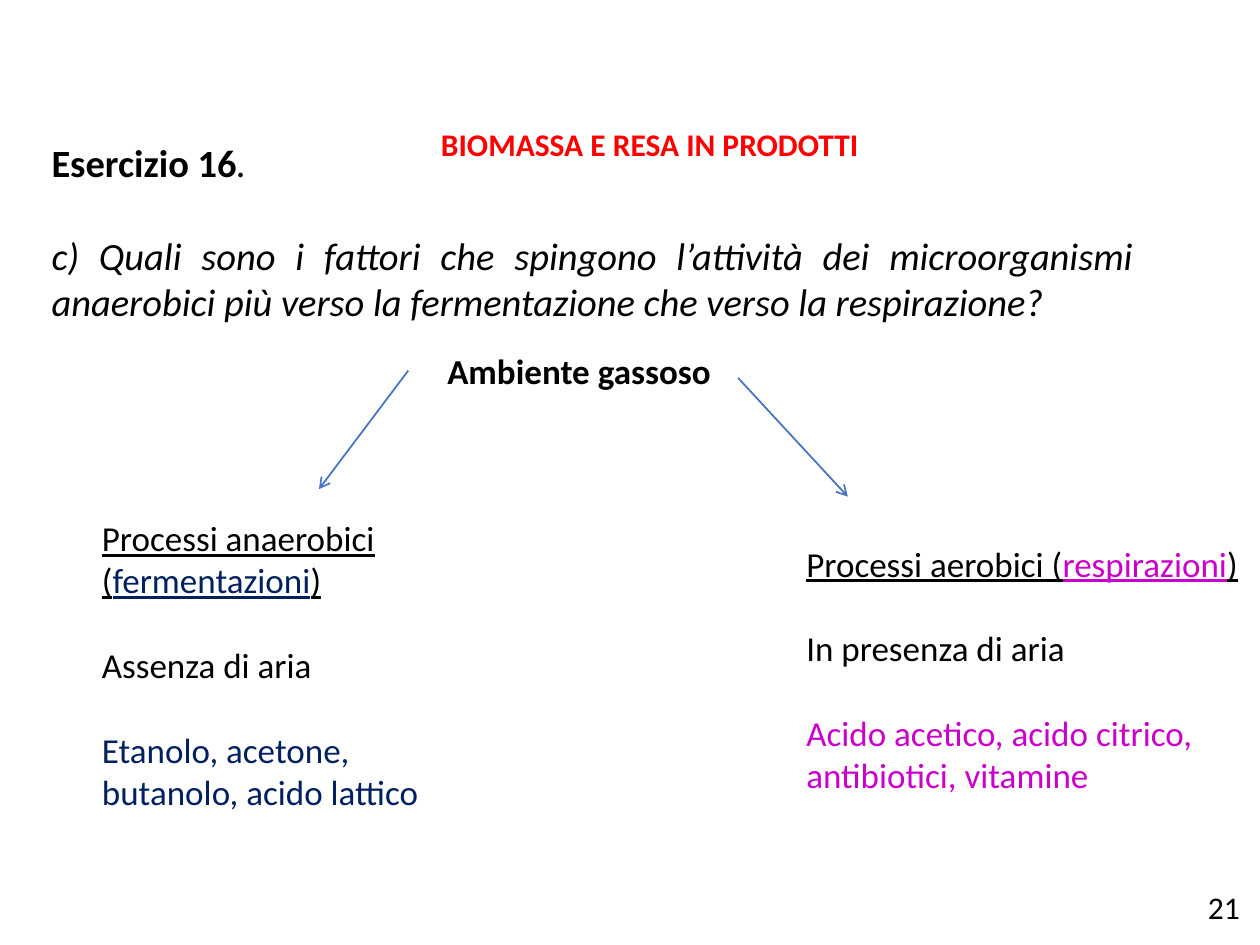
from lxml import etree
from pptx import Presentation
from pptx import util as u
from pptx.dml.color import RGBColor
from pptx.enum import shapes, text
from pptx.oxml.ns import qn

BLACK = RGBColor(0x00, 0x00, 0x00)
RED = RGBColor(0xFF, 0x00, 0x00)
NAVY = RGBColor(0x00, 0x20, 0x60)
MAGENTA = RGBColor(0xCC, 0x00, 0xCC)
BLUE = RGBColor(0x44, 0x72, 0xC4)
LEFT, CENTER, JUSTIFY = text.PP_ALIGN.LEFT, text.PP_ALIGN.CENTER, text.PP_ALIGN.JUSTIFY


def place(part, left, top, width, height, wrap=True):
    part.left, part.top = u.Cm(left), u.Cm(top)
    part.width, part.height = u.Cm(width), u.Cm(height)
    frame = part.text_frame
    frame.word_wrap = wrap
    frame.auto_size = text.MSO_AUTO_SIZE.NONE
    return frame


def write(frame, runs, size, align=LEFT, before=0):
    paragraph = frame.paragraphs[0]
    if paragraph.runs:
        paragraph = frame.add_paragraph()
    paragraph.alignment = align
    paragraph.space_before = u.Pt(before)
    properties = paragraph._p.get_or_add_pPr()
    properties.set("marL", "0")
    properties.set("indent", "0")
    etree.SubElement(properties, qn("a:buNone"))
    for words, color, style in runs:
        run = paragraph.add_run()
        run.text = words
        run.font.name = "Calibri"
        run.font.size = u.Pt(size)
        run.font.color.rgb = color
        run.font.bold = "b" in style
        run.font.italic = "i" in style
        run.font.underline = "u" in style


deck = Presentation()
deck.slide_width, deck.slide_height = u.Cm(25.4), u.Cm(19.05)
slide = deck.slides.add_slide(deck.slide_layouts[3])
heading, anaerobic, aerobic = slide.placeholders

heading_frame = place(heading, 1.8, 2.26, 22.6, 1.27)
write(heading_frame, [("BIOMASSA E RESA IN PRODOTTI", RED, "b")], 18, CENTER)

exercise = place(slide.shapes.add_textbox(0, 0, 0, 0), 0.79, 2.67, 22.3, 4.95)
write(exercise, [("Esercizio 16", BLACK, "b"), (". ", BLACK, "i")], 22, JUSTIFY)
question = ("c) Quali sono i fattori che spingono l’attività dei microorganismi "
            "anaerobici più verso la fermentazione che verso la respirazione?")
write(exercise, [(question, BLACK, "i")], 22, JUSTIFY, before=26.8)

environment = place(slide.shapes.add_textbox(0, 0, 0, 0), 8.74, 6.93, 5.87, 1.12, wrap=False)
write(environment, [("Ambiente gassoso", BLACK, "b")], 20, CENTER)

for start_x, start_y, end_x, end_y in [(8.23, 7.47, 6.43, 9.86), (14.88, 7.62, 17.09, 10.01)]:
    branch = slide.shapes.add_connector(
        shapes.MSO_CONNECTOR.STRAIGHT,
        u.Cm(start_x), u.Cm(start_y), u.Cm(end_x), u.Cm(end_y))
    branch.line.color.rgb = BLUE
    branch.line.width = u.Pt(1)
    etree.SubElement(branch.line._get_or_add_ln(), qn("a:tailEnd"), type="arrow")
    etree.SubElement(branch._element.spPr, qn("a:effectLst"))

processes = [
    (place(anaerobic, 1.8, 10.29, 8.41, 7.09), NAVY,
     "Processi anaerobici (", "fermentazioni", "Assenza di aria",
     ["Etanolo, acetone, butanolo, acido lattico"]),
    (place(aerobic, 16, 10.8, 9.3, 5.38, wrap=False), MAGENTA,
     "Processi aerobici (", "respirazioni", "In presenza di aria",
     ["Acido acetico, acido citrico,", "antibiotici, vitamine"]),
]
for frame, accent, process, kind, air, products in processes:
    write(frame, [(process, BLACK, "u"), (kind, accent, "u"), (")", BLACK, "u")], 20)
    write(frame, [(air, BLACK, "")], 20, before=24.4)
    for position, product in enumerate(products):
        write(frame, [(product, accent, "")], 20, before=0 if position else 24.4)

page_number = place(slide.shapes.add_textbox(0, 0, 0, 0), 24.1, 17.78, 1.35, 1.27, wrap=False)
write(page_number, [("21", BLACK, "")], 18)

deck.save("out.pptx")
